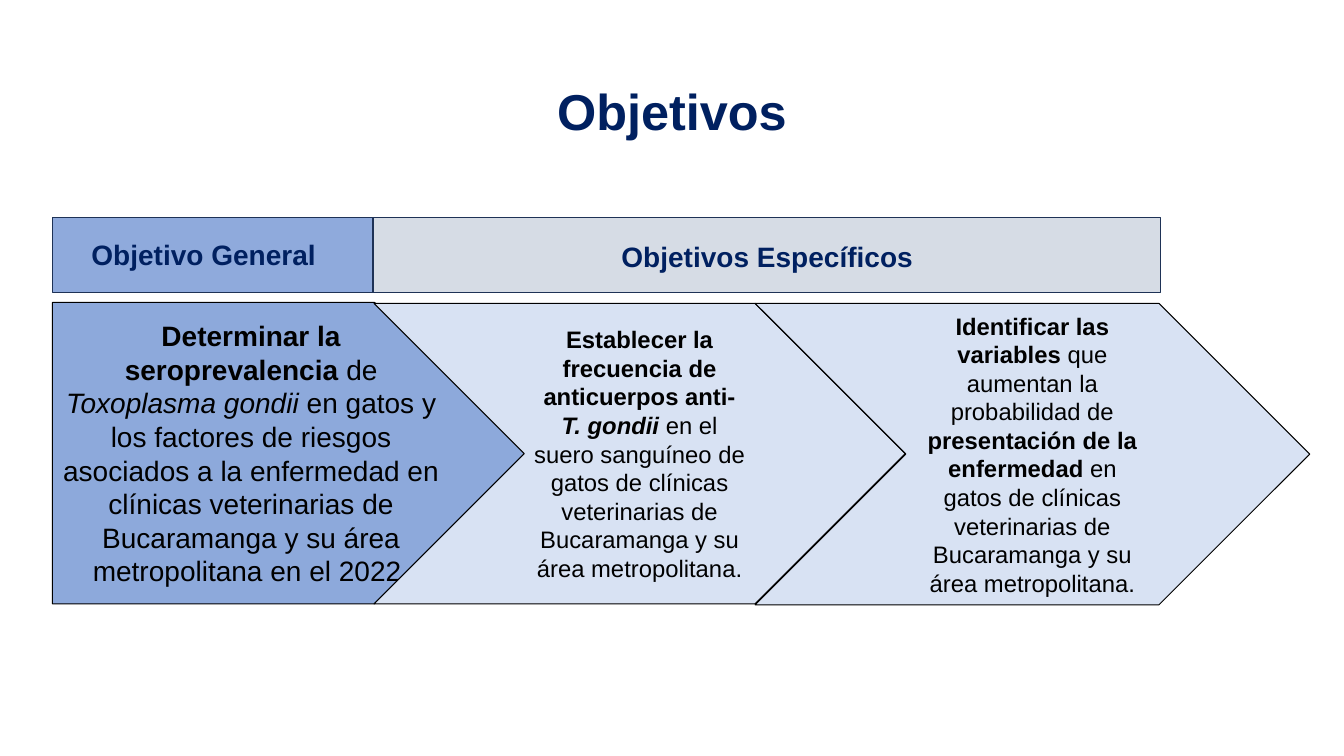
from dataclasses import dataclass

from pptx import Presentation
from pptx.dml.color import RGBColor
from pptx.enum.shapes import MSO_SHAPE
from pptx.enum.text import MSO_ANCHOR, PP_ALIGN
from pptx.slide import Slide
from pptx.text.text import TextFrame
from pptx.util import Inches, Pt

WIDTH, HEIGHT = Inches(13.33), Inches(7.5)
NAVY = RGBColor(0x00, 0x20, 0x60)
EDGE = RGBColor(0x1E, 0x32, 0x56)
BLACK = RGBColor(0x00, 0x00, 0x00)
BLUE = RGBColor(0x8F, 0xAA, 0xDC)
MID = RGBColor(0x8D, 0xA9, 0xDB)
PALE = RGBColor(0xD8, 0xE2, 0xF3)
GREY = RGBColor(0xD6, 0xDC, 0xE5)


@dataclass(frozen=True)
class Box:
    left: float
    top: float
    width: float
    height: float

    def place(self) -> tuple[int, int, int, int]:
        return (
            int(WIDTH * self.left / 100),
            int(HEIGHT * self.top / 100),
            int(WIDTH * self.width / 100),
            int(HEIGHT * self.height / 100),
        )


@dataclass(frozen=True)
class Run:
    text: str
    bold: bool = False
    italic: bool = False


@dataclass(frozen=True)
class Label:
    box: Box
    text: str
    size: int


@dataclass(frozen=True)
class Panel:
    box: Box
    kind: MSO_SHAPE
    fill: RGBColor
    edge: RGBColor = BLACK
    line: float = 0.75
    size: int = 17
    runs: tuple[Run, ...] = ()


PANELS = (
    Panel(Box(3.9, 28.8, 23.86, 9.87), MSO_SHAPE.RECTANGLE, BLUE, EDGE, 1),
    Panel(Box(27.76, 28.8, 58.59, 9.87), MSO_SHAPE.RECTANGLE, GREY, EDGE, 1),
    Panel(
        Box(3.9, 40, 35.18, 39.87), MSO_SHAPE.PENTAGON, MID, size=20,
        runs=(
            Run("Determinar la seroprevalencia ", bold=True),
            Run("de "),
            Run("Toxoplasma gondii", italic=True),
            Run(" en gatos y los factores de riesgos asociados a la enfermedad "
                "en clínicas veterinarias de Bucaramanga y su área "
                "metropolitana en el 2022."),
        ),
    ),
    Panel(
        Box(27.83, 40.13, 39.53, 39.73), MSO_SHAPE.CHEVRON, PALE,
        runs=(
            Run("Establecer la frecuencia de anticuerpos anti- ", bold=True),
            Run("T. gondii ", bold=True, italic=True),
            Run("en el suero sanguíneo de gatos de clínicas veterinarias de "
                "Bucaramanga y su área metropolitana."),
        ),
    ),
    Panel(
        Box(56.19, 40.13, 41.26, 39.87), MSO_SHAPE.CHEVRON, PALE,
        runs=(
            Run("Identificar las variables", bold=True),
            Run(" que aumentan la probabilidad de "),
            Run("presentación de la enfermedad", bold=True),
            Run(" en gatos de clínicas veterinarias de Bucaramanga y su área "
                "metropolitana."),
        ),
    ),
)

LABELS = (
    Label(Box(2.63, 10, 94.75, 9.47), "Objetivos", 36),
    Label(Box(1.28, 30.8, 27.76, 5.87), "Objetivo General", 20),
    Label(Box(43.21, 31.07, 27.76, 5.87), "Objetivos Específicos", 20),
)


def write(frame: TextFrame, runs: tuple[Run, ...], size: int, color: RGBColor) -> None:
    frame.word_wrap = True
    para = frame.paragraphs[0]
    para.alignment = PP_ALIGN.CENTER
    para.font.name = "Arial"
    para.font.size = Pt(size)
    para.font.color.rgb = color
    for part in runs:
        run = para.add_run()
        run.text = part.text
        run.font.name = "Arial"
        run.font.size = Pt(size)
        run.font.color.rgb = color
        run.font.bold = part.bold
        run.font.italic = part.italic


def draw_panel(slide: Slide, panel: Panel) -> None:
    shape = slide.shapes.add_shape(panel.kind, *panel.box.place())
    shape.shadow.inherit = False
    shape.fill.solid()
    shape.fill.fore_color.rgb = panel.fill
    shape.line.color.rgb = panel.edge
    shape.line.width = Pt(panel.line)
    if panel.runs:
        shape.text_frame.vertical_anchor = MSO_ANCHOR.MIDDLE
        write(shape.text_frame, panel.runs, panel.size, BLACK)


def draw_label(slide: Slide, label: Label) -> None:
    shape = slide.shapes.add_textbox(*label.box.place())
    write(shape.text_frame, (Run(label.text, bold=True),), label.size, NAVY)


def main() -> None:
    deck = Presentation()
    deck.slide_width, deck.slide_height = WIDTH, HEIGHT
    slide = deck.slides.add_slide(deck.slide_layouts[6])
    for panel in PANELS:
        draw_panel(slide, panel)
    for label in LABELS:
        draw_label(slide, label)
    deck.save("out.pptx")


if __name__ == "__main__":
    main()
